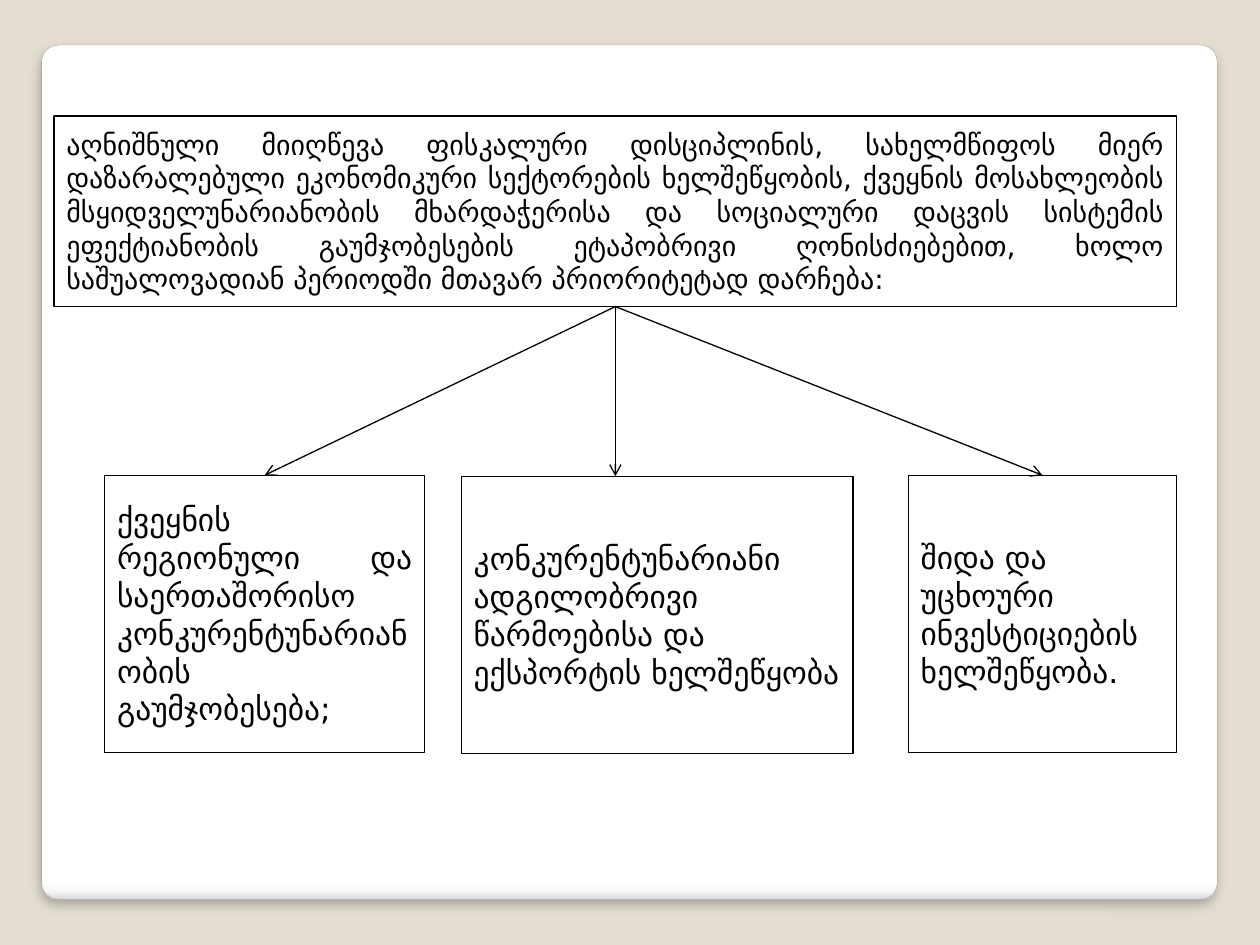
import pptx
import pptx.dml.color
import pptx.enum.shapes
import pptx.enum.text
import pptx.oxml
import pptx.oxml.ns
import pptx.util
from lxml import etree
from pptx.dml.color import RGBColor
from pptx.util import Cm

BEIGE = RGBColor(0xE3, 0xDE, 0xD1)
WHITE = RGBColor(0xFF, 0xFF, 0xFF)
BLACK = RGBColor(0x00, 0x00, 0x00)
GRAY = RGBColor(0xA4, 0xA4, 0xA4)
PALE_GRAY = RGBColor(0xF7, 0xF7, 0xF7)
EDGE_GRAY = RGBColor(0xDA, 0xDA, 0xDA)

FONT = "DejaVu Sans"
SHAPE = pptx.enum.shapes.MSO_SHAPE
LEFT = pptx.enum.text.PP_ALIGN.LEFT
JUSTIFY = pptx.enum.text.PP_ALIGN.JUSTIFY
qn = pptx.oxml.ns.qn


def add_text_box(left, top, width, height, text, size, alignment):
    box = slide.shapes.add_shape(SHAPE.RECTANGLE, Cm(left), Cm(top), Cm(width), Cm(height))
    box.shadow.inherit = False
    box.fill.solid()
    box.fill.fore_color.rgb = WHITE
    box.line.color.rgb = BLACK
    box.line.width = pptx.util.Pt(0.75)
    frame = box.text_frame
    frame.word_wrap = True
    frame.vertical_anchor = pptx.enum.text.MSO_ANCHOR.MIDDLE
    paragraph = frame.paragraphs[0]
    paragraph.alignment = alignment
    run = paragraph.add_run()
    run.text = text
    run.font.name = FONT
    run.font.size = pptx.util.Pt(size)
    run.font.color.rgb = BLACK
    return box


presentation = pptx.Presentation()
presentation.slide_width = Cm(25.4)
presentation.slide_height = Cm(19.05)
slide = presentation.slides.add_slide(presentation.slide_layouts[6])
slide.background.fill.solid()
slide.background.fill.fore_color.rgb = BEIGE

# White card with a shaded lower edge and a soft shadow
card = slide.shapes.add_shape(SHAPE.ROUNDED_RECTANGLE, Cm(0.84), Cm(0.91), Cm(23.7), Cm(17.22))
card.adjustments[0] = 0.02
card.line.color.rgb = GRAY
card.line.width = pptx.util.Pt(0.16)
card.fill.gradient()
card.fill.gradient_angle = 270
stops = card._element.spPr.find(".//" + qn("a:gsLst"))
for stop in list(stops):
    stops.remove(stop)
for percent, color in ((0, WHITE), (98, WHITE), (99, PALE_GRAY), (100, EDGE_GRAY)):
    stop = etree.SubElement(stops, qn("a:gs"), pos=str(percent * 1000))
    etree.SubElement(stop, qn("a:srgbClr"), val=str(color))

card.shadow.inherit = False
effects = card._element.spPr.find(qn("a:effectLst"))
shadow = etree.SubElement(
    effects, qn("a:outerShdw"), blurRad=str(pptx.util.Pt(6)), dist=str(pptx.util.Pt(4)),
    dir="5400000", algn="t", rotWithShape="0",
)
shadow_color = etree.SubElement(shadow, qn("a:srgbClr"), val=str(BLACK))
etree.SubElement(shadow_color, qn("a:alpha"), val="25000")

# Statement and the three priorities below it
statement = add_text_box(
    1.09, 2.34, 22.63, 3.84,
    "აღნიშნული მიიღწევა ფისკალური დისციპლინის, სახელმწიფოს მიერ "
    "დაზარალებული ეკონომიკური სექტორების ხელშეწყობის, ქვეყნის მოსახლეობის "
    "მსყიდველუნარიანობის მხარდაჭერისა და სოციალური დაცვის სისტემის "
    "ეფექტიანობის გაუმჯობესების ეტაპობრივი ღონისძიებებით, ხოლო "
    "საშუალოვადიან პერიოდში მთავარ პრიორიტეტად დარჩება:",
    16, JUSTIFY,
)
PRIORITY_HEIGHT = 5.59
competitiveness = add_text_box(
    2.11, 9.58, 6.45, PRIORITY_HEIGHT,
    "ქვეყნის რეგიონული და საერთაშორისო კონკურენტუნარიანობის გაუმჯობესება;",
    18, JUSTIFY,
)
exports = add_text_box(
    9.3, 9.6, 7.9, PRIORITY_HEIGHT,
    "კონკურენტუნარიანი ადგილობრივი წარმოებისა და ექსპორტის ხელშეწყობა",
    18, LEFT,
)
investment = add_text_box(
    18.31, 9.58, 5.41, PRIORITY_HEIGHT,
    "შიდა და უცხოური ინვესტიციების ხელშეწყობა.",
    18, LEFT,
)

# Arrows from the statement; the one to exports drops straight down, off that box's centre
start_x = statement.left + statement.width // 2
start_y = statement.top + statement.height
for priority in (competitiveness, exports, investment):
    arrow = slide.shapes.add_connector(
        pptx.enum.shapes.MSO_CONNECTOR.STRAIGHT, start_x, start_y, start_x, priority.top
    )
    arrow.begin_connect(statement, 2)
    if priority is not exports:
        arrow.end_connect(priority, 0)
    arrow.line.color.rgb = BLACK
    arrow.line.width = pptx.util.Pt(0.75)
    etree.SubElement(arrow.line._get_or_add_ln(), qn("a:tailEnd"), type="arrow")
    etree.SubElement(arrow._element.spPr, qn("a:effectLst"))

presentation.save("out.pptx")
